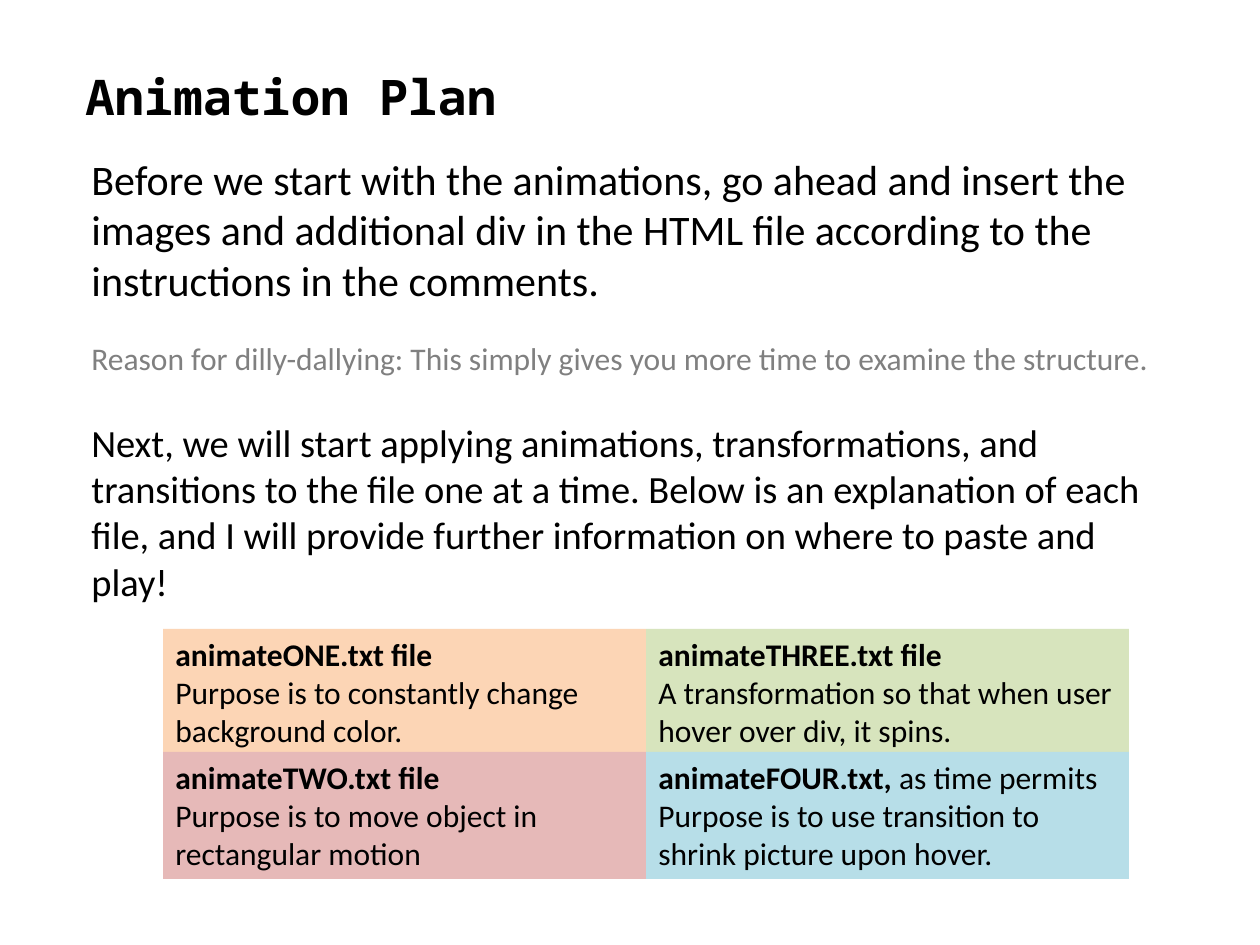
from pptx import Presentation
from pptx.dml.color import RGBColor
from pptx.enum.shapes import MSO_SHAPE
from pptx.enum.text import MSO_ANCHOR, PP_ALIGN
from pptx.util import Emu, Pt

RECT = MSO_SHAPE.RECTANGLE
TOP, MIDDLE = MSO_ANCHOR.TOP, MSO_ANCHOR.MIDDLE
LEFT = PP_ALIGN.LEFT
SCALE = 914400 / 126
BLACK, GRAY = "000000", "808080"

INTRO = [
    ("Before we start with the animations, go ahead and insert the images and "
     "additional div in the HTML file according to the instructions in the comments.",
     24, BLACK, 0),
    ("Reason for dilly-dallying: This simply gives you more time to examine "
     "the structure.", 18, GRAY, 19.5),
    ("Next, we will start applying animations, transformations, and transitions "
     "to the file one at a time. Below is an explanation of each file, and I will "
     "provide further information on where to paste and play!", 22, BLACK, 24.4),
]
FILES = [
    ("FCD5B5", "animateONE.txt file", "",
     "Purpose is to constantly change background color."),
    ("E6B9B8", "animateTWO.txt file", "",
     "Purpose is to move object in rectangular motion"),
    ("D7E4BD", "animateTHREE.txt file", "",
     "A transformation so that when user hover over div, it spins."),
    ("B7DEE8", "animateFOUR.txt, ", "as time permits",
     "Purpose is to use transition to shrink picture upon hover."),
]


def px(n):
    """Turn pixels into EMU."""
    return Emu(round(n * SCALE))


def color(code):
    """Turn a hex string into a colour."""
    return RGBColor.from_string(code)


def style(run, size, code=BLACK, bold=False, face="Calibri"):
    """Set the font of a run."""
    font = run.font
    font.name, font.size, font.bold = face, Pt(size), bold
    font.color.rgb = color(code)


def add_text(slide, box, anchor=TOP):
    """Add a wrapping text box and return its frame."""
    frame = slide.shapes.add_textbox(*map(px, box)).text_frame
    frame.word_wrap = True
    frame.vertical_anchor = anchor
    return frame


def add_title(slide, text):
    """Add the slide title."""
    frame = add_text(slide, (73, 60, 945, 72), MIDDLE)
    frame.text = text
    style(frame.paragraphs[0].runs[0], 28, bold=True, face="Noto Sans Mono")


def add_intro(slide, parts):
    """Add the introduction, one paragraph per part."""
    frame = add_text(slide, (79, 147, 1113, 475))
    frame.text = "\n".join(part[0] for part in parts)
    for para, (_, size, code, gap) in zip(frame.paragraphs, parts):
        para.space_before = Pt(gap)
        style(para.runs[0], size, code)


def add_card(slide, box, fill, name, note, purpose):
    """Add a filled card with a bold file name and its purpose."""
    card = slide.shapes.add_shape(RECT, *map(px, box))
    card.shadow.inherit = False
    card.fill.solid()
    card.fill.fore_color.rgb = color(fill)
    card.line.fill.background()
    frame = card.text_frame
    frame.word_wrap = True
    frame.vertical_anchor = TOP
    frame.text = f"{name}\n{purpose}"
    head, body = frame.paragraphs
    head.alignment = body.alignment = LEFT
    style(head.runs[0], 18, bold=True)
    style(body.runs[0], 18)
    if note:
        run = head.add_run()
        run.text = note
        style(run, 18)


def main():
    """Build and save the slide."""
    deck = Presentation()
    deck.slide_width, deck.slide_height = px(1260), px(945)
    slide = deck.slides.add_slide(deck.slide_layouts[6])
    add_title(slide, "Animation Plan")
    add_intro(slide, INTRO)
    for i, file in enumerate(FILES):
        col, row = divmod(i, 2)
        add_card(slide, (163 + 483 * col, 629 + 123 * row, 483, 127), *file)
    deck.save("out.pptx")


if __name__ == "__main__":
    main()
